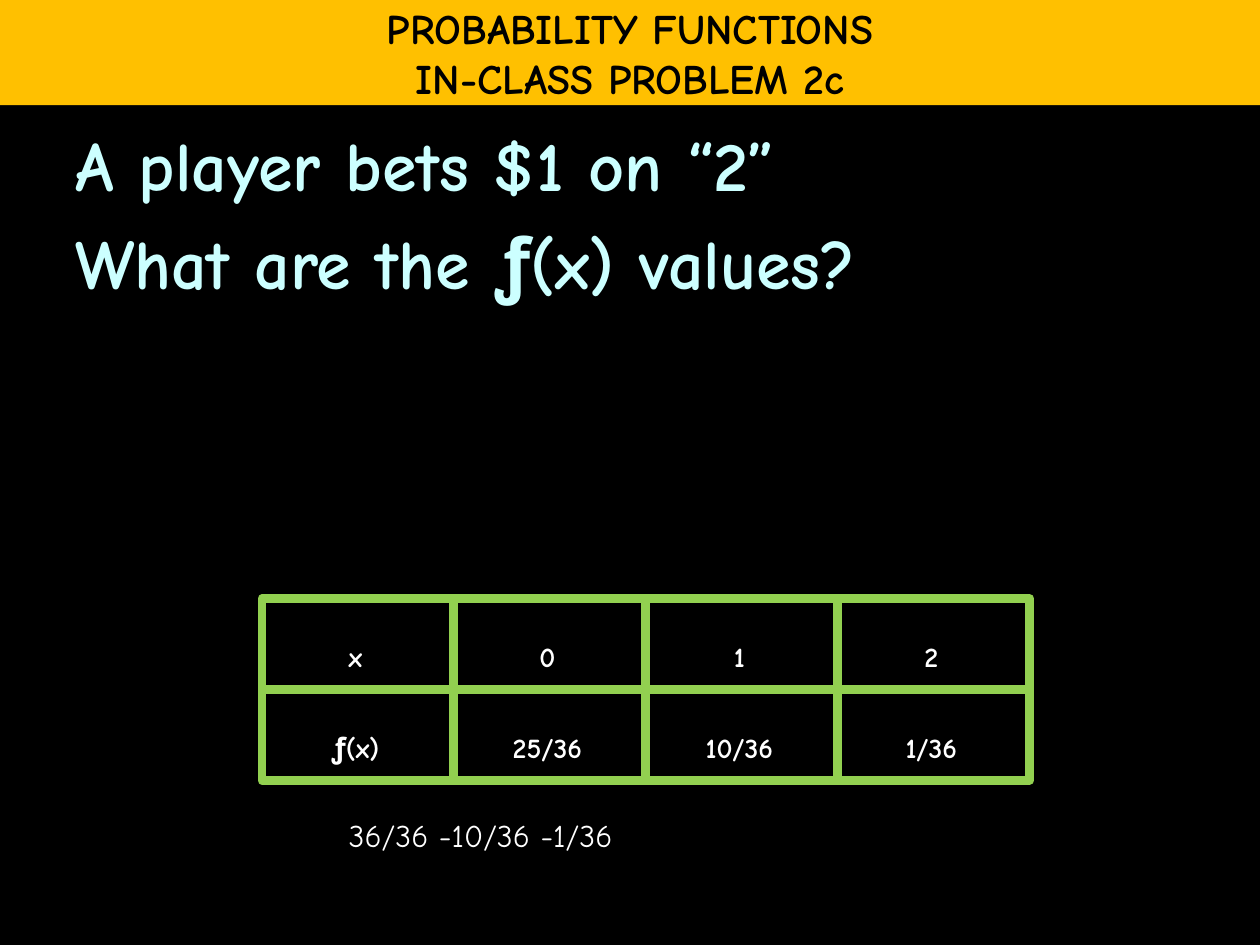
from pptx import Presentation
from pptx.dml.color import RGBColor
from pptx.enum.shapes import MSO_SHAPE as Shape
from pptx.enum.text import MSO_ANCHOR as Anchor, PP_ALIGN as Align
from pptx.util import Cm, Pt

BLACK = RGBColor(0x00, 0x00, 0x00)
WHITE = RGBColor(0xFF, 0xFF, 0xFF)
GOLD = RGBColor(0xFF, 0xC0, 0x00)
GREEN = RGBColor(0x92, 0xD0, 0x50)
CYAN = RGBColor(0xCC, 0xFF, 0xFF)
FACE = "Comic Neue"

ROWS = [["x", "0", "1", "2"],
        ["ƒ(x)", "25/36", "10/36", "1/36"]]


def write(frame, lines, size, color, bold=True, **para):
    """Fill a text frame, one paragraph per line."""
    look = {"name": FACE, "size": Pt(size), "bold": bold}
    for i, line in enumerate(lines):
        p = frame.add_paragraph() if i else frame.paragraphs[0]
        for key, val in para.items():
            setattr(p, key, val)
        run = p.add_run()
        run.text = line
        for key, val in look.items():
            setattr(run.font, key, val)
        run.font.color.rgb = color


def add_text(slide, box, lines, size, color, **look):
    frame = slide.shapes.add_textbox(*map(Cm, box)).text_frame
    frame.word_wrap = True
    write(frame, lines, size, color, **look)


def add_rect(shapes, box, form):
    """Add a bare rectangle and set its text frame from form."""
    rect = shapes.add_shape(Shape.RECTANGLE, *map(Cm, box))
    rect.shadow.inherit = False
    rect.fill.background()
    rect.line.fill.background()
    for key, val in form.items():
        setattr(rect.text_frame, key, val)
    return rect


def add_banner(slide, box, lines):
    form = {"word_wrap": False, "vertical_anchor": Anchor.MIDDLE}
    bar = add_rect(slide.shapes, box, form)
    bar.fill.solid()
    bar.fill.fore_color.rgb = GOLD
    write(bar.text_frame, lines, 24, BLACK, alignment=Align.CENTER)


def add_grid(slide, left, top, wide, high, rows):
    """Draw one outlined box per value, joined in a group."""
    group = slide.shapes.add_group_shape()
    form = {"margin_left": Cm(0.03), "margin_right": Cm(0.13),
            "margin_top": Cm(0.13), "margin_bottom": Cm(0.51),
            "word_wrap": True, "vertical_anchor": Anchor.TOP}
    for r, row in enumerate(rows):
        for c, word in enumerate(row):
            box = (left + c * wide, top + r * high, wide, high)
            cell = add_rect(group.shapes, box, form)
            cell.line.color.rgb = GREEN
            cell.line.width = Pt(5)
            write(cell.text_frame, [word], 16, WHITE,
                  alignment=Align.CENTER, line_spacing=Pt(39))


def main():
    deck = Presentation()
    deck.slide_width, deck.slide_height = Cm(25.4), Cm(19.05)
    slide = deck.slides.add_slide(deck.slide_layouts[6])
    slide.background.fill.solid()
    slide.background.fill.fore_color.rgb = BLACK

    add_text(slide, (1.27, 2.32, 22.86, 15.67),
             ["A player bets $1 on “2”", "What are the ƒ(x) values?"],
             40, CYAN, space_before=Pt(8))
    add_banner(slide, (0, 0, 25.4, 2.12),
               ["PROBABILITY FUNCTIONS", "IN-CLASS PROBLEM 2c"])
    add_grid(slide, 5.28, 12.07, 3.87, 1.83, ROWS)
    add_text(slide, (6.78, 16.33, 7.19, 1.02), ["36/36 -10/36 -1/36"],
             18, WHITE, bold=False)
    deck.save("out.pptx")


if __name__ == "__main__":
    main()
